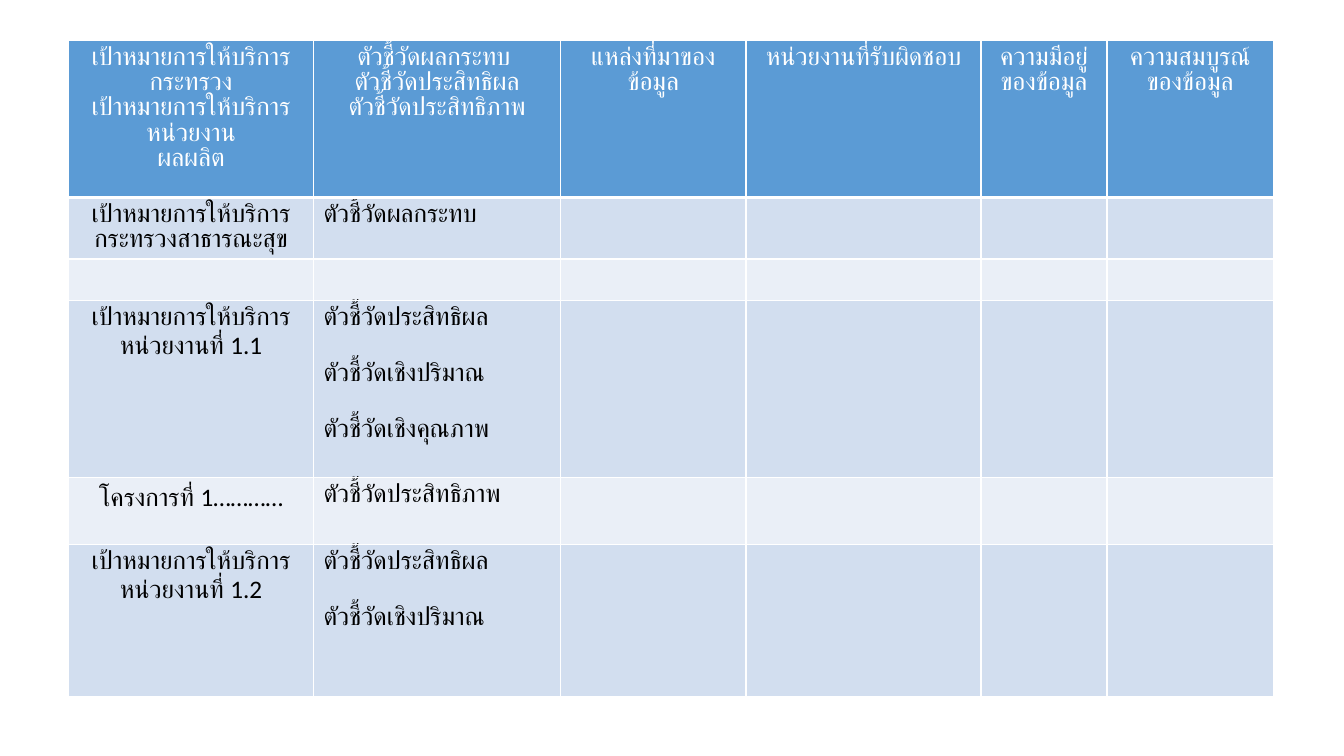
from lxml.etree import SubElement
from pptx import Presentation
from pptx.dml.color import RGBColor
from pptx.enum.lang import MSO_LANGUAGE_ID as Lang
from pptx.enum.text import PP_ALIGN as Align
from pptx.oxml.ns import qn
from pptx.util import Inches, Pt

COLORS = {"head": "5B9BD5", "odd": "D2DEEF", "even": "EAEFF7",
          "white": "FFFFFF", "black": "000000"}
COLS = [2.43, 2.45, 1.84, 2.33, 1.25, 1.65]
ROWS = [1.56, 0.61, 0.41, 1.76, 0.66, 1.51]
GOAL = "เป้าหมายการให้บริการ"
KPI = "ตัวชี้วัด"
IMPACT, EFFECT, EFFICIENCY, QUANTITY, QUALITY = (
    KPI + kind for kind in
    ("ผลกระทบ", "ประสิทธิผล", "ประสิทธิภาพ", "เชิงปริมาณ", "เชิงคุณภาพ"))
CELLS = [
    [[GOAL + "กระทรวง", GOAL + "หน่วยงาน", "ผลผลิต"],
     [IMPACT + " ", EFFECT, EFFICIENCY],
     ["แหล่งที่มาของข้อมูล"], ["หน่วยงานที่รับผิดชอบ"],
     ["ความมีอยู่ของข้อมูล"], ["ความสมบูรณ์ของข้อมูล"]],
    [[GOAL + "กระทรวงสาธารณะสุข"], [IMPACT]],
    [],
    [[GOAL + "หน่วยงานที่ 1.1"], [EFFECT, QUANTITY, QUALITY]],
    [["โครงการที่ 1…………"], [EFFICIENCY]],
    [[GOAL + "หน่วยงานที่ 1.2"], [EFFECT, QUANTITY]],
]


def rgb(name):
    """Return a named colour."""
    return RGBColor.from_string(COLORS[name])


def style_cell(cell, fill, bottom):
    """Give a cell white borders and a solid fill."""
    tcPr = cell._tc.get_or_add_tcPr()
    for side, width in (("L", 1), ("R", 1), ("T", 1), ("B", bottom)):
        ln = SubElement(tcPr, qn("a:ln" + side), w=str(Pt(width)))
        solid = SubElement(ln, qn("a:solidFill"))
        SubElement(solid, qn("a:srgbClr"), val=COLORS["white"])
    cell.fill.solid()
    cell.fill.fore_color.rgb = rgb(fill)


def write_cell(cell, lines, color, align, gap):
    """Write one paragraph per line, with a gap in points between them."""
    tf = cell.text_frame
    for i, line in enumerate(lines):
        p = tf.add_paragraph() if i else tf.paragraphs[0]
        p.alignment = align
        if i and gap:
            p.space_before = Pt(gap)
        r = p.add_run()
        r.text = line
        r.font.name, r.font.size = "Calibri", Pt(18)
        r.font.color.rgb = rgb(color)
        r.font.language_id = Lang.THAI


def add_indicator_table(s, x, y, w, h):
    """Place the table of goals and indicators in the given box."""
    table = s.shapes.add_table(len(ROWS), len(COLS), x, y, w, h).table
    table.first_row = table.horz_banding = False
    for col, share in zip(table.columns, COLS):
        col.width = int(w * share / sum(COLS))
    for i, (row, share) in enumerate(zip(table.rows, ROWS)):
        row.height = int(h * share / sum(ROWS))
        head = i == 0
        fill = "head" if head else "odd" if i % 2 else "even"
        for cell in row.cells:
            style_cell(cell, fill, 3 if head else 1)
        for j, lines in enumerate(CELLS[i]):
            write_cell(row.cells[j], lines, "white" if head else "black",
                       Align.CENTER if head or j == 0 else Align.LEFT,
                       0 if head else 22)


def main():
    """Build and save the slide."""
    prs = Presentation()
    prs.slide_width, prs.slide_height = Inches(13.33), Inches(7.5)
    s = prs.slides.add_slide(prs.slide_layouts[6])
    add_indicator_table(s, Inches(0.68), Inches(0.4),
                        Inches(sum(COLS)), Inches(sum(ROWS)))
    prs.save("out.pptx")


if __name__ == "__main__":
    main()
